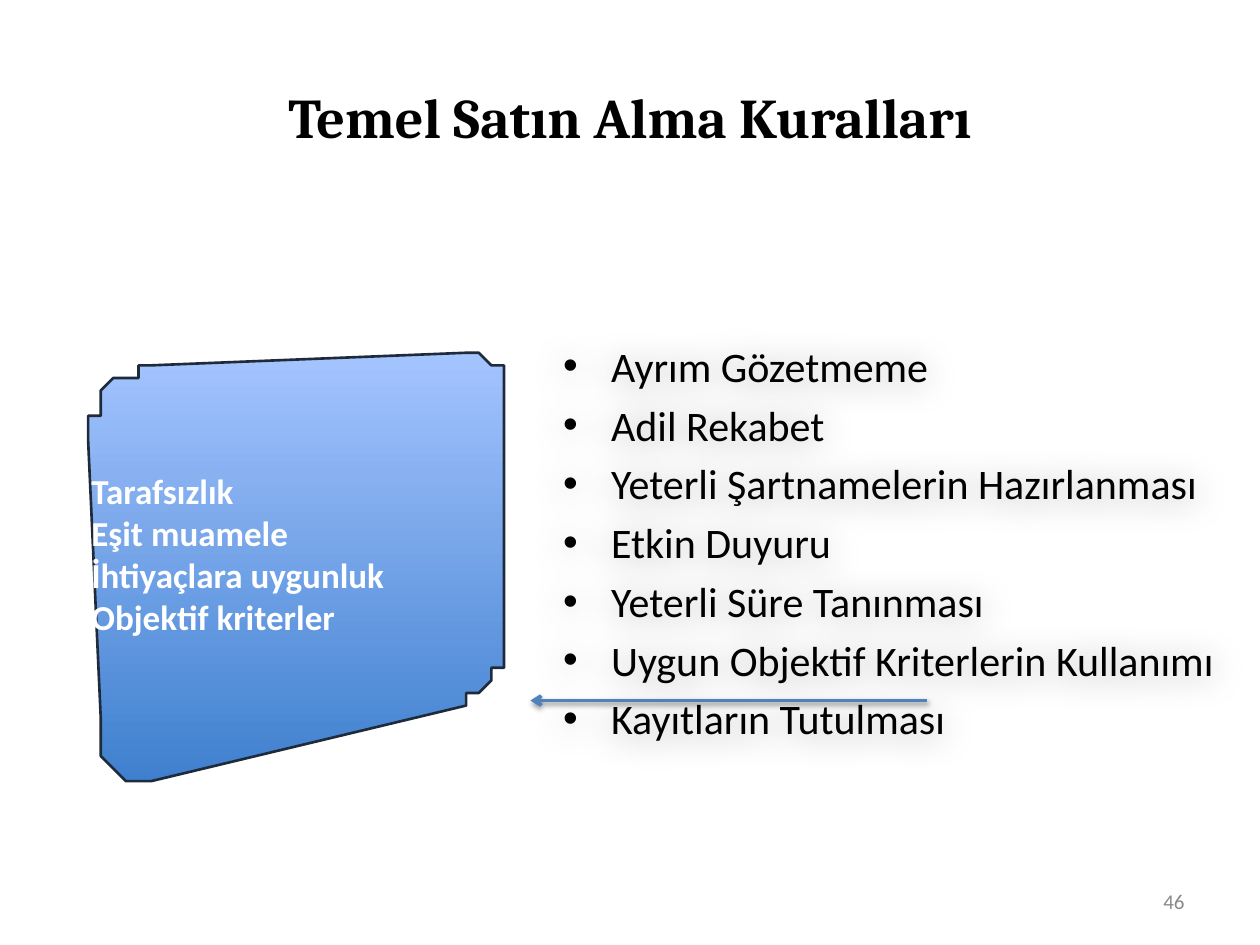
"""Build the slide on basic procurement rules."""
import lxml.etree
import pptx
import pptx.dml.color
import pptx.enum.shapes
import pptx.enum.text
import pptx.oxml
import pptx.oxml.ns
import pptx.util

THEME = {
    "heading": "Cambria", "body": "Calibri",
    "ink": "000000", "white": "FFFFFF", "muted": "898989", "accent": "4F81BD",
    "edge": "1F2A3A", "panel_dark": "3F80CE", "panel_light": "A4C4FF",
    "title_size": 32, "list_size": 24, "panel_size": 20, "number_size": 12,
}
ALIGN = pptx.enum.text.PP_ALIGN
ANCHOR = pptx.enum.text.MSO_ANCHOR
RGB = pptx.dml.color.RGBColor.from_string
qn = pptx.oxml.ns.qn


def write(p, text, font, size, color, bold=False):
    """Add one formatted run to a paragraph."""
    r = p.add_run()
    r.text = text
    r.font.name = THEME[font]
    r.font.size = pptx.util.Pt(THEME[size])
    r.font.color.rgb = RGB(THEME[color])
    r.font.bold = bold


def cast_shadow(sp, blur, dist, alpha):
    """Give a shape a soft black shadow straight below it."""
    props = sp._element.spPr
    for old in props.findall(qn("a:effectLst")):
        props.remove(old)
    props.append(pptx.oxml.parse_xml(
        f'<a:effectLst {pptx.oxml.ns.nsdecls("a")}>'
        f'<a:outerShdw blurRad="{pptx.util.Pt(blur)}" dist="{pptx.util.Pt(dist)}" '
        'dir="5400000" rotWithShape="0"><a:srgbClr val="000000">'
        f'<a:alpha val="{alpha * 1000}"/></a:srgbClr></a:outerShdw></a:effectLst>'))


prs = pptx.Presentation()
prs.slide_width = pptx.util.Inches(10)
prs.slide_height = pptx.util.Inches(7.5)
cell = prs.slide_width // 100
s = prs.slides.add_slide(prs.slide_layouts[1])

title = s.shapes.title
title.left, title.top, title.width, title.height = (int(v * cell) for v in (5, 3, 90, 12.5))
title.text_frame.vertical_anchor = ANCHOR.MIDDLE
p = title.text_frame.paragraphs[0]
p.alignment = ALIGN.CENTER
write(p, "Temel Satın Alma Kuralları", "heading", "title_size", "ink", True)

rules = s.placeholders[1]
rules.left, rules.top, rules.width, rules.height = (int(v * cell) for v in (43.7, 26.5, 54.3, 34.6))
cast_shadow(rules, 20, 2, 35)
tf = rules.text_frame
tf.word_wrap = True
for i, text in enumerate((
        "Ayrım Gözetmeme", "Adil Rekabet", "Yeterli Şartnamelerin Hazırlanması",
        "Etkin Duyuru", "Yeterli Süre Tanınması",
        "Uygun Objektif Kriterlerin Kullanımı", "Kayıtların Tutulması")):
    p = tf.add_paragraph() if i else tf.paragraphs[0]
    pPr = p._p.get_or_add_pPr()
    pPr.set("marL", str(int(3.8 * cell)))
    pPr.set("indent", str(int(-3.8 * cell)))
    lxml.etree.SubElement(pPr, qn("a:buChar")).set("char", "•")
    p.space_before = pptx.util.Pt(0.2 * THEME["list_size"] if i else 0)
    write(p, text, "body", "list_size", "ink")

arrow = s.shapes.add_connector(
    pptx.enum.shapes.MSO_CONNECTOR.STRAIGHT,
    *(int(v * cell) for v in (73.6, 55.6, 42.1, 55.6)))
arrow.line.color.rgb = RGB(THEME["accent"])
arrow.line.width = pptx.util.Pt(2)
lxml.etree.SubElement(arrow.line._get_or_add_ln(), qn("a:tailEnd")).set("type", "arrow")
cast_shadow(arrow, 3.1, 1.6, 38)

corners = (
    ((7.3, 34.9), (7.3, 29.5), (12.1, 29.3)),
    ((37.1, 28.3), (40.6, 28.2), (40.5, 32.7)),
    ((40, 50.8), (39.9, 54.6), (36.7, 55.6)),
    ((12.1, 61.7), (8.1, 62.7), (8, 57)),
)
steps = 12
outline = [
    tuple((1 - t) ** 2 * a + 2 * t * (1 - t) * b + t ** 2 * c for a, b, c in zip(*corner))
    for corner in corners for t in (n / steps for n in range(steps + 1))
]
builder = s.shapes.build_freeform(*outline[0], scale=cell)
builder.add_line_segments(outline[1:], close=True)
panel = builder.convert_to_shape()
panel.shadow.inherit = False
panel.fill.gradient()
panel.fill.gradient_angle = 90
for stop, color in zip(panel.fill.gradient_stops, ("panel_dark", "panel_light")):
    stop.color.rgb = RGB(THEME[color])
panel.line.color.rgb = RGB(THEME["edge"])
panel.line.width = pptx.util.Pt(1.5)
tf = panel.text_frame
tf.word_wrap = True
tf.vertical_anchor = ANCHOR.MIDDLE
tf.margin_left, tf.margin_right = int(0.25 * cell), cell
tf.margin_top, tf.margin_bottom = 0, int(2.2 * cell)
for i, text in enumerate((
        "Tarafsızlık", "Eşit muamele", "İhtiyaçlara uygunluk", "Objektif kriterler")):
    p = tf.add_paragraph() if i else tf.paragraphs[0]
    p.alignment = ALIGN.LEFT
    write(p, text, "body", "panel_size", "white", True)

number = s.shapes.add_textbox(*(int(v * cell) for v in (71.7, 69.5, 23.3, 4)))
tf = number.text_frame
tf.word_wrap = True
tf.vertical_anchor = ANCHOR.MIDDLE
p = tf.paragraphs[0]
p.alignment = ALIGN.RIGHT
write(p, "46", "body", "number_size", "muted")

prs.save("out.pptx")
